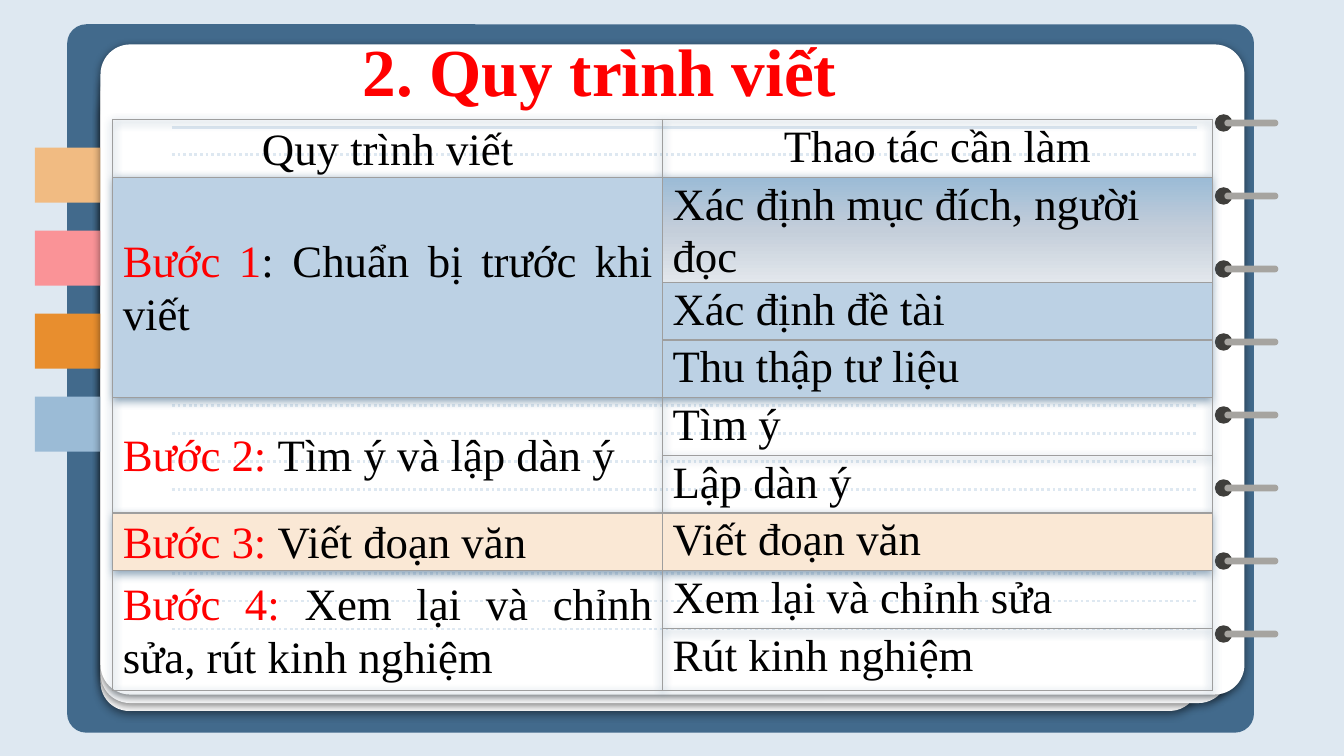
from copy import deepcopy
from dataclasses import dataclass

import pptx
import pptx.dml.color
import pptx.enum.dml
import pptx.enum.shapes
import pptx.enum.text
import pptx.oxml
import pptx.oxml.ns
import pptx.util
from pptx.util import Cm

Shape = pptx.enum.shapes.MSO_SHAPE
Align = pptx.enum.text.PP_ALIGN
Anchor = pptx.enum.text.MSO_ANCHOR
qn = pptx.oxml.ns.qn
NAMESPACE = pptx.oxml.ns.nsdecls("a")
FONT = "Times New Roman"
RED, BLACK, WHITE = "FF0000", "000000", "FFFFFF"
PALE_BLUE, BLUE, PEACH = "DEE8F1", "BCD1E4", "FAE8D5"
GRADIENT = ("9BBBD6", "C4CEDA", "E2E7EC")


@dataclass
class Box:
    """Place and size in centimetres."""
    left: float
    top: float
    width: float
    height: float

    def lengths(self) -> tuple:
        return Cm(self.left), Cm(self.top), Cm(self.width), Cm(self.height)


@dataclass
class Step:
    """One step of the process, with the actions listed beside it."""
    label: str
    text: str
    actions: tuple
    fill: str | None = None


PAPERS = [
    (Box(1.9, 1.63, 20.75, 11.81), 43),
    (Box(1.9, 1.17, 21.31, 12.12), 43),
    (Box(1.9, 0.84, 21.62, 12.29), 50),
]
TAB_COLORS = ["F1BB82", "FA9397", "E88E2E", "9BBBD6"]
RULE_COUNT, FIRST_RULE, LAST_RULE = 18, 2.92, 11.89
RING_COUNT, FIRST_RING, RING_STEP = 8, 2.16, 1.38
HEADINGS = ("Quy trình viết", "Thao tác cần làm")
STEPS = [
    Step("Bước 1", ": Chuẩn bị trước khi viết",
         ("Xác định mục đích, người đọc", "Xác định đề tài", "Thu thập tư liệu"), BLUE),
    Step("Bước 2: ", "Tìm ý và lập dàn ý", ("Tìm ý", "Lập dàn ý")),
    Step("Bước 3: ", "Viết đoạn văn", ("Viết đoạn văn",), PEACH),
    Step("Bước 4: ", "Xem lại và chỉnh sửa, rút kinh nghiệm",
         ("Xem lại và chỉnh sửa", "Rút kinh nghiệm")),
]
ROW_HEIGHTS = [1.09, 1.98] + [1.09] * 6 + [1.17]


def color(value: str) -> pptx.dml.color.RGBColor:
    return pptx.dml.color.RGBColor.from_string(value)


def shadow_effect(value: str, opacity: int):
    return pptx.oxml.parse_xml(
        f'<a:effectLst {NAMESPACE}><a:outerShdw blurRad="57150" dist="19050" '
        f'dir="5400000" algn="bl" rotWithShape="0"><a:srgbClr val="{value}">'
        f'<a:alpha val="{opacity * 1000}"/></a:srgbClr></a:outerShdw></a:effectLst>')


def add_shape(slide, kind, box: Box, fill: str, corner: float | None = None):
    shape = slide.shapes.add_shape(kind, *box.lengths())
    shape.shadow.inherit = False
    shape.fill.solid()
    shape.fill.fore_color.rgb = color(fill)
    shape.line.fill.background()
    if corner is not None:
        shape.adjustments[0] = corner
    return shape


def add_paper(slide, box: Box, opacity: int) -> None:
    properties = add_shape(slide, Shape.ROUNDED_RECTANGLE, box, WHITE, 0.046)._element.spPr
    properties.replace(properties.find(qn("a:effectLst")), shadow_effect(BLACK, opacity))


def add_rule(slide, top: float, dotted: bool = True) -> None:
    rule = slide.shapes.add_connector(
        pptx.enum.shapes.MSO_CONNECTOR.STRAIGHT, Cm(3.25), Cm(top), Cm(22.63), Cm(top))
    rule.line.color.rgb = color(PALE_BLUE)
    rule.line.width = pptx.util.Pt(1.5)
    if dotted:
        rule.line.dash_style = pptx.enum.dml.MSO_LINE.ROUND_DOT
    rule._element.spPr.append(pptx.oxml.parse_xml(f"<a:effectLst {NAMESPACE}/>"))


def add_notebook(slide) -> None:
    add_shape(slide, Shape.ROUNDED_RECTANGLE, Box(1.27, 0.46, 22.43, 13.39), "426A8C", 0.027)
    for box, opacity in PAPERS[:2]:
        add_paper(slide, box, opacity)
    for index, tab_color in enumerate(TAB_COLORS):
        add_shape(slide, Shape.RECTANGLE, Box(0.66, 2.79 + 1.57 * index, 1.85, 1.04), tab_color)
    add_paper(slide, *PAPERS[2])
    add_rule(slide, 2.41, dotted=False)
    rule_step = (LAST_RULE - FIRST_RULE) / (RULE_COUNT - 1)
    for index in range(RULE_COUNT):
        add_rule(slide, FIRST_RULE + rule_step * index)
    for index in range(RING_COUNT):
        top = FIRST_RING + RING_STEP * index
        add_shape(slide, Shape.OVAL, Box(22.96, top, 0.33, 0.33), "3F3E3B")
        add_shape(slide, Shape.ROUNDED_RECTANGLE, Box(23.14, top + 0.1, 1.02, 0.13), "A6A4A0", 0.5)


def add_run(paragraph, text: str, size: int, text_color: str, bold: bool = False) -> None:
    run = paragraph.add_run()
    run.text = text
    run.font.name = FONT
    run.font.size = pptx.util.Pt(size)
    run.font.bold = bold
    run.font.color.rgb = color(text_color)


def place_title(slide) -> None:
    title = slide.shapes.title
    title.left, title.top, title.width, title.height = Box(6.6, 0.58, 11.99, 1.47).lengths()
    frame = title.text_frame
    frame.word_wrap = True
    frame.auto_size = pptx.enum.text.MSO_AUTO_SIZE.NONE
    frame.vertical_anchor = Anchor.MIDDLE
    frame.margin_left = frame.margin_top = frame.margin_bottom = Cm(0.25)
    frame.margin_right = Cm(0.18)
    frame.paragraphs[0].alignment = Align.LEFT
    add_run(frame.paragraphs[0], "2. Quy trình viết", 36, RED, bold=True)
    slide.shapes._spTree.append(title._element)  # in front of the notebook


def style_cell(cell, fill: str | None) -> None:
    properties = cell._tc.get_or_add_tcPr()
    for side in ("lnL", "lnR", "lnT", "lnB"):
        properties.append(pptx.oxml.parse_xml(
            f'<a:{side} {NAMESPACE} w="9525"><a:solidFill><a:srgbClr val="9E9E9E"/>'
            f'</a:solidFill></a:{side}>'))
    if fill:
        cell.fill.solid()
        cell.fill.fore_color.rgb = color(fill)
    else:
        cell.fill.background()
    cell.margin_left = cell.margin_right = Cm(0.19)
    cell.margin_top = cell.margin_bottom = 0


def fill_with_gradient(cell) -> None:
    cell.fill.gradient()
    cell.fill.gradient_angle = 270
    first = cell.fill.gradient_stops[0]._gs
    first.addnext(deepcopy(first))
    for index, stop in enumerate(cell.fill.gradient_stops):
        stop.position = index / 2
        stop.color.rgb = color(GRADIENT[index])


def write_cell(cell, runs: list[tuple[str, str]], alignment, anchor) -> None:
    cell.vertical_anchor = anchor
    paragraph = cell.text_frame.paragraphs[0]
    paragraph.alignment = alignment
    paragraph.line_spacing = 1.06
    for text, text_color in runs:
        add_run(paragraph, text, 24, text_color)


def add_process_table(slide) -> None:
    box = Box(2.13, 2.26, 20.78, sum(ROW_HEIGHTS))
    table = slide.shapes.add_table(len(ROW_HEIGHTS), 2, *box.lengths()).table
    table.first_row = table.horz_banding = False
    properties = table._tbl.tblPr
    properties.find(qn("a:tableStyleId")).text = "{5940675A-B579-460E-94D1-54222C63F5DA}"
    properties.insert(0, shadow_effect("426A8C", 63))
    for row, height in zip(table.rows, ROW_HEIGHTS):
        row.height = Cm(height)

    for column, anchor in enumerate((Anchor.MIDDLE, Anchor.TOP)):
        style_cell(table.cell(0, column), None)
        write_cell(table.cell(0, column), [(HEADINGS[column], BLACK)], Align.CENTER, anchor)
    top = 1
    for step in STEPS:
        for row, action in enumerate(step.actions, start=top):
            for column in range(2):
                style_cell(table.cell(row, column), step.fill)
            write_cell(table.cell(row, 1), [(action, BLACK)], Align.LEFT, Anchor.TOP)
        step_cell = table.cell(top, 0)
        if len(step.actions) > 1:
            step_cell.merge(table.cell(top + len(step.actions) - 1, 0))
        write_cell(step_cell, [(step.label, RED), (step.text, BLACK)],
                   Align.JUSTIFY, Anchor.MIDDLE)
        top += len(step.actions)
    fill_with_gradient(table.cell(1, 1))


def main() -> None:
    presentation = pptx.Presentation()
    presentation.slide_width, presentation.slide_height = Cm(25.4), Cm(14.29)
    slide = presentation.slides.add_slide(presentation.slide_layouts[5])
    slide.background.fill.solid()
    slide.background.fill.fore_color.rgb = color(PALE_BLUE)
    add_notebook(slide)
    place_title(slide)
    add_process_table(slide)
    presentation.save("out.pptx")


if __name__ == "__main__":
    main()
